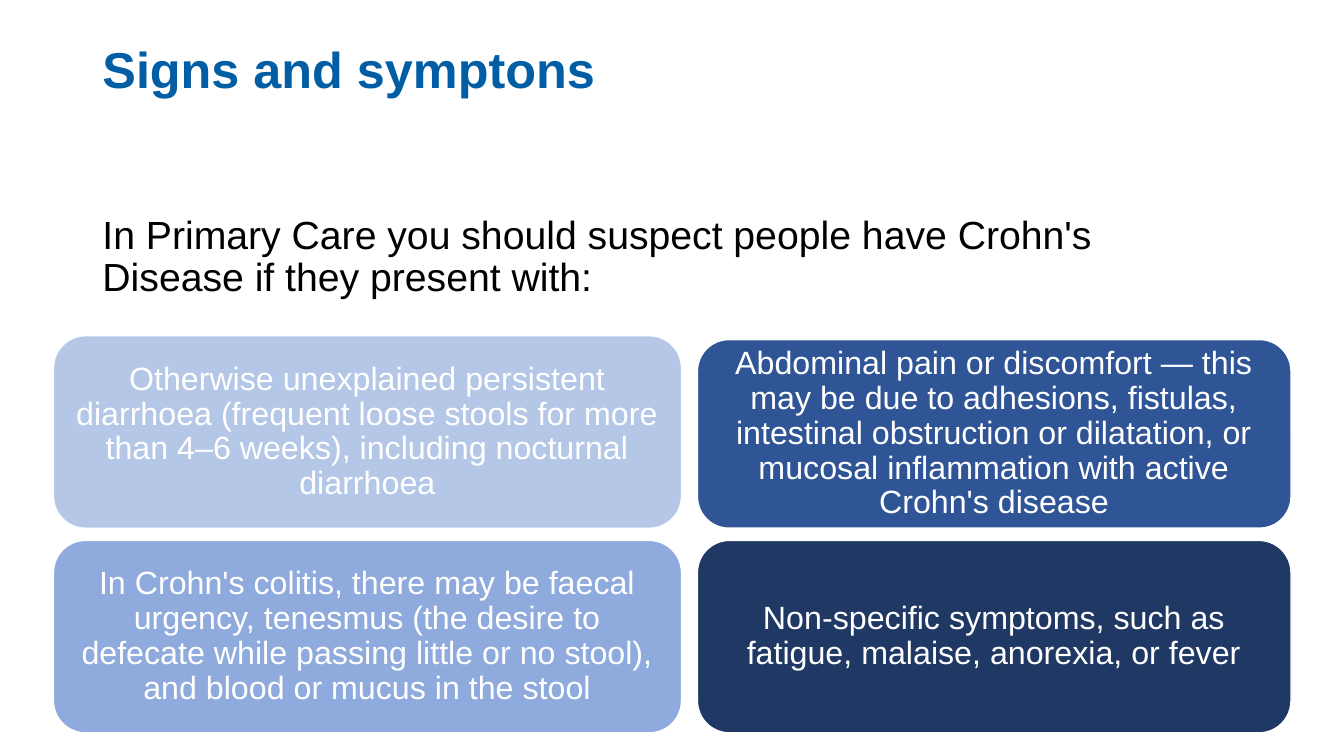
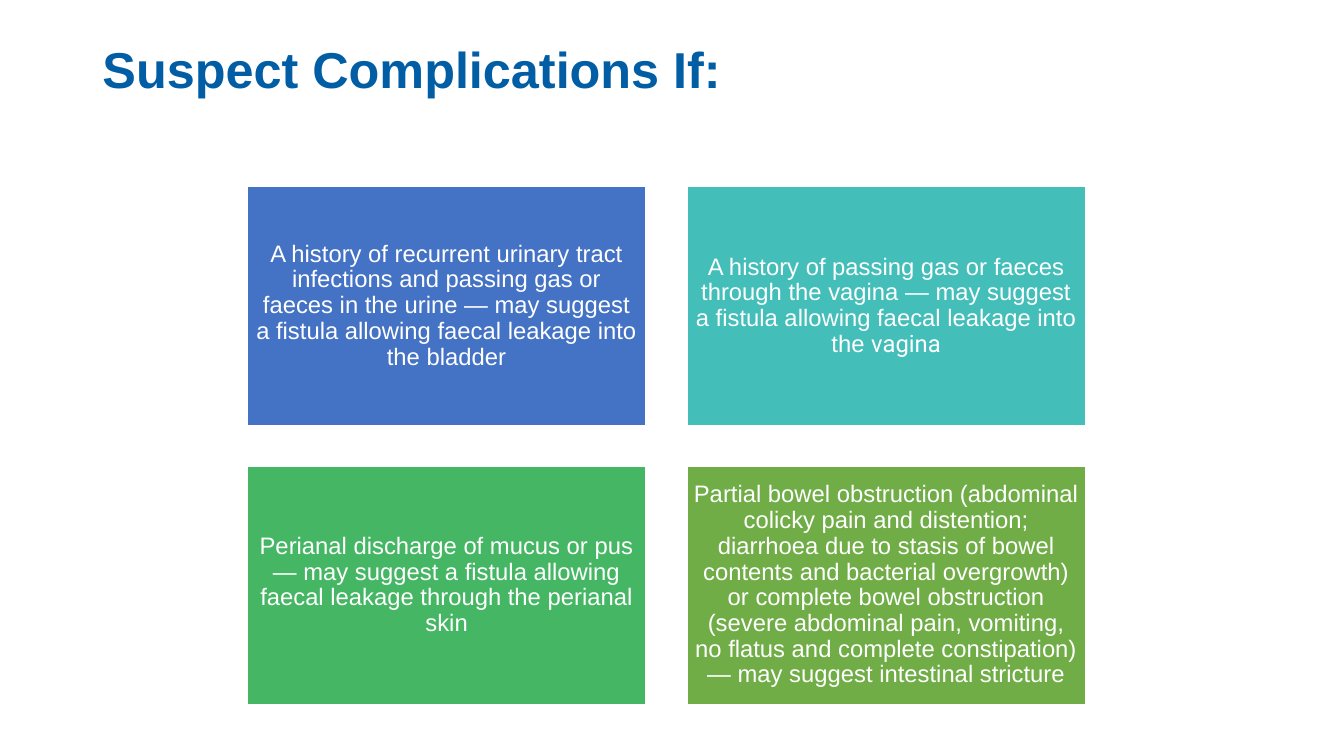
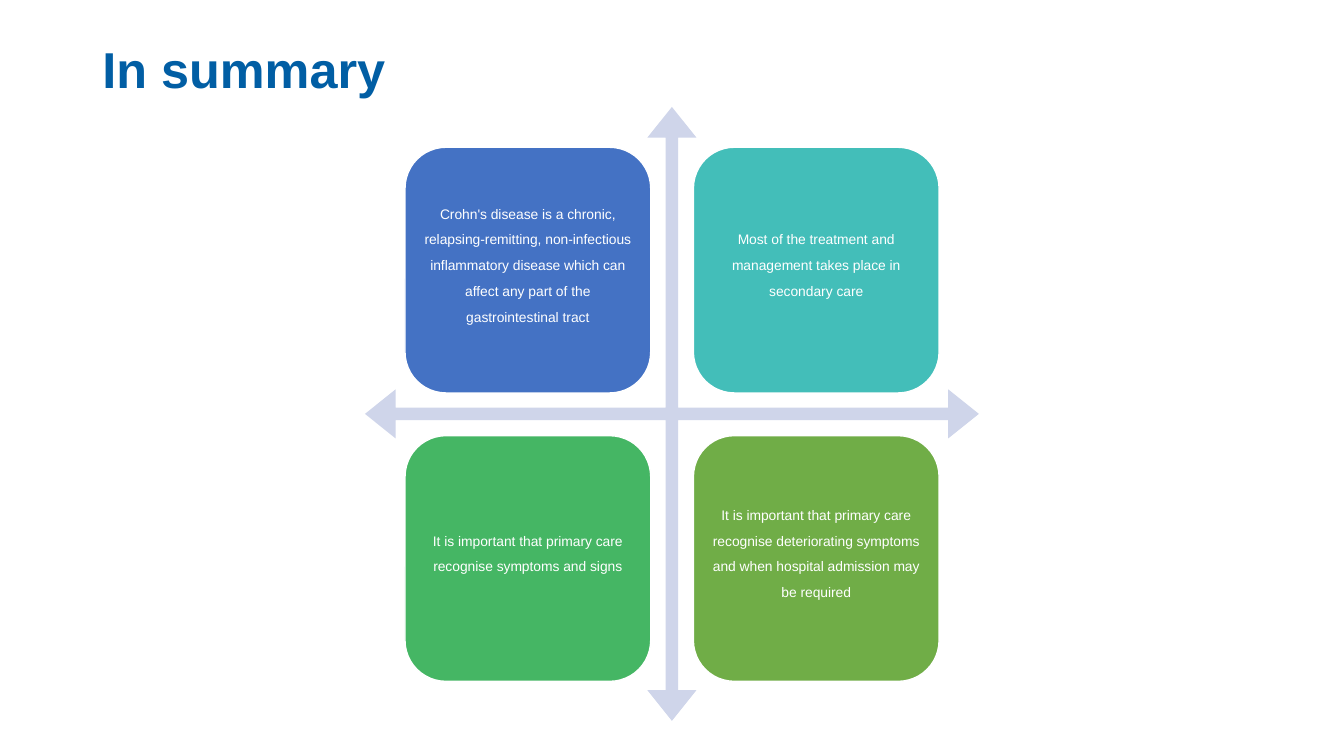
from dataclasses import dataclass

from lxml.etree import SubElement
from pptx import Presentation
from pptx.dml.color import RGBColor
from pptx.enum.shapes import MSO_SHAPE as Preset
from pptx.enum.text import MSO_ANCHOR as Anchor, MSO_AUTO_SIZE as AutoSize, PP_ALIGN as Align
from pptx.oxml.ns import qn
from pptx.util import Pt

FONT = "Arial"
TITLE_COLOR = "015EA4"
WHITE = "FFFFFF"
ARROW_COLOR = "CFD5EA"
QUADRANT_COLORS = ("4472C4", "43BEB9", "45B664", "70AD47")
CONTENT_LAYOUT, TITLE_LAYOUT = 1, 5


@dataclass
class Box:
    left: float
    top: float
    width: float
    height: float


@dataclass
class Card:
    text: str
    color: str
    box: Box
    tail: str = ""


@dataclass
class CardStyle:
    preset: Preset
    size: float
    margin: float
    line_width: float
    baseline: int = 0


@dataclass
class Grid:
    left: float
    top: float
    width: float
    height: float
    column_step: float
    row_step: float

    def cell(self, index: int) -> Box:
        row, column = divmod(index, 2)
        return Box(self.left + column * self.column_step, self.top + row * self.row_step,
                   self.width, self.height)


def rgb(color: str) -> RGBColor:
    return RGBColor.from_string(color)


def write(shape, text: str, *, size: float, color: str = WHITE, font: str = FONT,
          bold: bool = False, baseline: int = 0, align: Align = Align.LEFT) -> None:
    paragraph = shape.text_frame.paragraphs[0]
    paragraph.alignment = align
    paragraph.line_spacing = 0.9
    paragraph.space_before = Pt(0)
    run = paragraph.add_run()
    run.text = text
    run.font.name = font
    run.font.size = Pt(size)
    run.font.bold = bold
    run.font.color.rgb = rgb(color)
    if baseline:
        run.font._element.set("baseline", str(baseline * 1000))


def place(shape, box: Box) -> None:
    shape.left, shape.top = Pt(box.left), Pt(box.top)
    shape.width, shape.height = Pt(box.width), Pt(box.height)


def prepare_placeholder(placeholder, box: Box) -> None:
    place(placeholder, box)
    frame = placeholder.text_frame
    frame.word_wrap = True
    frame.auto_size = AutoSize.NONE
    frame.vertical_anchor = Anchor.TOP


def add_titled_slide(presentation, layout: int, title: str):
    slide = presentation.slides.add_slide(presentation.slide_layouts[layout])
    prepare_placeholder(slide.shapes.title, Box(66, 28.8, 828, 104.4))
    write(slide.shapes.title, title, size=36, color=TITLE_COLOR, bold=True)
    return slide


def add_preset(slide, preset: Preset, box: Box, color: str):
    shape = slide.shapes.add_shape(preset, Pt(box.left), Pt(box.top), Pt(box.width), Pt(box.height))
    shape.shadow.inherit = False
    shape.fill.solid()
    shape.fill.fore_color.rgb = rgb(color)
    shape.line.fill.background()
    return shape


def add_card(slide, card: Card, style: CardStyle) -> None:
    shape = add_preset(slide, style.preset, card.box, card.color)
    shape.line.color.rgb = rgb(WHITE)
    shape.line.width = Pt(style.line_width)
    frame = shape.text_frame
    frame.word_wrap = True
    frame.vertical_anchor = Anchor.MIDDLE
    frame.margin_left = frame.margin_right = Pt(style.margin)
    frame.margin_top = frame.margin_bottom = Pt(style.margin)
    for text, font in ((card.text, FONT), (card.tail, "Roboto")):
        if text:
            write(shape, text, size=style.size, font=font, baseline=style.baseline,
                  align=Align.CENTER)


def add_quadrants(slide, texts: list[str], grid: Grid, style: CardStyle,
                  tails: tuple[str, ...] = ("",) * 4) -> None:
    for index, (text, color, tail) in enumerate(zip(texts, QUADRANT_COLORS, tails)):
        add_card(slide, Card(text, color, grid.cell(index), tail), style)


def build_symptoms(presentation) -> None:
    slide = add_titled_slide(presentation, CONTENT_LAYOUT, "Signs and symptons")
    body = slide.placeholders[1]
    prepare_placeholder(body, Box(66, 150.5, 828, 324.7))
    properties = body.text_frame.paragraphs[0]._p.get_or_add_pPr()
    properties.set("marL", "0")
    properties.set("indent", "0")
    SubElement(properties, qn("a:buNone"))
    write(body, "In Primary Care you should suspect people have Crohn's Disease if they present with:",
          size=28, color="000000")

    left, left_width, right, right_width = 38.2, 448.6, 498.2, 424
    top, bottom, height = 239.8, 386, 137.5
    inset_top = 242.6
    cards = [
        Card("Otherwise unexplained persistent diarrhoea (frequent loose stools for more than "
             "4–6 weeks), including nocturnal diarrhoea",
             "B4C7E7", Box(left, top, left_width, height)),
        Card("In Crohn's colitis, there may be faecal urgency, tenesmus (the desire to defecate "
             "while passing little or no stool), and blood or mucus in the stool",
             "8FAADC", Box(left, bottom, left_width, height)),
        Card("Abdominal pain or discomfort — this may be due to adhesions, fistulas, intestinal "
             "obstruction or dilatation, or mucosal inflammation with active Crohn's disease",
             "2F5597", Box(right, inset_top, right_width, top + height - inset_top)),
        Card("Non-specific symptoms, such as fatigue, malaise, anorexia, or fever",
             "203864", Box(right, bottom, right_width, height)),
    ]
    style = CardStyle(Preset.ROUNDED_RECTANGLE, size=23, margin=6, line_width=1)
    for card in cards:
        add_card(slide, card, style)


def build_complications(presentation) -> None:
    slide = add_titled_slide(presentation, TITLE_LAYOUT, "Suspect Complications If:")
    texts = [
        "A history of recurrent urinary tract infections and passing gas or faeces in the urine — "
        "may suggest a fistula allowing faecal leakage into the bladder",
        "A history of passing gas or faeces through the vagina — "
        "may suggest a fistula allowing faecal leakage into the ",
        "Perianal discharge of mucus or pus — may suggest a fistula allowing faecal leakage "
        "through the perianal skin",
        "Partial bowel obstruction (abdominal colicky pain and distention; diarrhoea due to stasis "
        "of bowel contents and bacterial overgrowth) or complete bowel obstruction (severe "
        "abdominal pain, vomiting, no flatus and complete constipation) — may suggest intestinal "
        "stricture",
    ]
    add_quadrants(slide, texts, Grid(176.5, 133, 285, 171, 314, 199.5),
                  CardStyle(Preset.RECTANGLE, size=17, margin=5, line_width=1.5),
                  tails=("", "vagina", "", ""))


def build_summary(presentation) -> None:
    slide = add_titled_slide(presentation, TITLE_LAYOUT, "In summary")
    arrows = add_preset(slide, Preset.QUAD_ARROW, Box(260.7, 76.4, 438.5, 438.5), ARROW_COLOR)
    for index, value in enumerate((0.02, 0.04, 0.05)):
        arrows.adjustments[index] = value
    texts = [
        "Crohn's disease is a chronic, relapsing-remitting, non-infectious inflammatory "
        "disease which can affect any part of the gastrointestinal tract",
        "Most of the treatment and management takes place in secondary care",
        "It is important that primary care recognise symptoms and signs",
        "It is important that primary care recognise deteriorating symptoms and when hospital "
        "admission may be required",
    ]
    add_quadrants(slide, texts, Grid(289.3, 105.2, 175.5, 175.5, 206, 206),
                  CardStyle(Preset.ROUNDED_RECTANGLE, size=17, margin=5, line_width=1, baseline=30))


def main() -> None:
    presentation = Presentation()
    presentation.slide_width, presentation.slide_height = Pt(960), Pt(540)
    build_symptoms(presentation)
    build_complications(presentation)
    build_summary(presentation)
    presentation.save("out.pptx")


if __name__ == "__main__":
    main()
